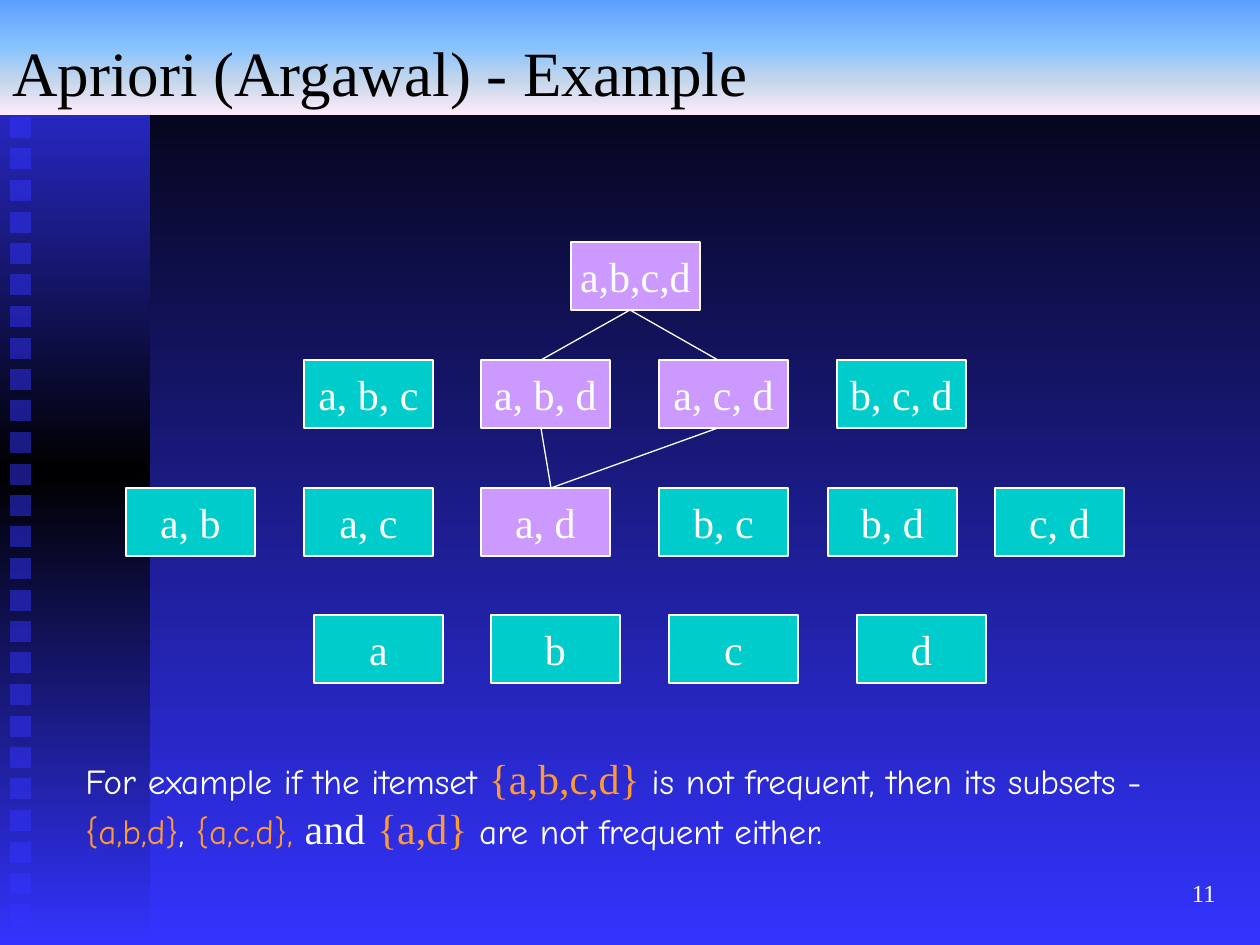
from pptx import Presentation
from pptx.dml.color import RGBColor
from pptx.enum.shapes import MSO_CONNECTOR as Connector, MSO_SHAPE as Preset
from pptx.enum.text import MSO_ANCHOR as Anchor, PP_ALIGN as Align
from pptx.oxml.ns import qn
from pptx.util import Pt
from lxml.etree import SubElement

EMU_PER_PX = 914400 / 126
SERIF, CASUAL = "Times New Roman", "Comic Neue"
COLORS = {
    "black": "000000", "white": "FFFFFF", "blue": "3333FF",
    "frequent": "00CCCC", "infrequent": "CC99FF",
    "orange": "FF9933",
}
BACKDROP = [(0, COLORS["black"]), (100, COLORS["blue"])]
SIDEBAR = [(0, COLORS["blue"]), (50, COLORS["black"]), (100, COLORS["blue"])]
TITLE_BAR = [(0, "5E9EFF"), (40, "85C2FF"), (70, "C4D6EB"), (100, "FFEBFA")]

BOX_WIDTH, BOX_HEIGHT = 129, 68
# Each lattice level: top, then left edge and label of every itemset
LATTICE = [
    (242, [(571, "a,b,c,d")]),
    (360, [(304, "a, b, c"), (481, "a, b, d"), (659, "a, c, d"), (837, "b, c, d")]),
    (488, [(126, "a, b"), (304, "a, c"), (481, "a, d"),
           (659, "b, c"), (828, "b, d"), (995, "c, d")]),
    (615, [(314, "a"), (491, "b"), (669, "c"), (857, "d")]),
]
INFREQUENT = {"a,b,c,d", "a, b, d", "a, c, d", "a, d"}
LINKS = [
    ((551, 488), (541, 428)), ((551, 488), (718, 428)),
    ((541, 360), (630, 310)), ((718, 360), (630, 310)),
]
EXPLANATION = [
    ("For example if the itemset ", CASUAL, 20, "white"),
    ("{a,b,c,d}", SERIF, 24, "orange"),
    (" is not frequent, then its subsets - ", CASUAL, 20, "white"),
    ("{a,b,d}", CASUAL, 20, "orange"),
    (", ", CASUAL, 20, "white"),
    ("{a,c,d}, ", CASUAL, 20, "orange"),
    ("and", SERIF, 24, "white"),
    (" ", CASUAL, 20, "orange"),
    ("{a,d}", SERIF, 24, "orange"),
    (" are not frequent either.", CASUAL, 20, "white"),
]


def px(*lengths):
    return [round(length * EMU_PER_PX) for length in lengths]


def color(name):
    return RGBColor.from_string(COLORS[name])


def set_gradient(fill, element, stops):
    """Fill from top to bottom; element holds the fill's XML."""
    fill.gradient()
    fill.gradient_angle = 270
    stop_list = next(element.iter(qn("a:gsLst")))
    for old_stop in list(stop_list):
        stop_list.remove(old_stop)
    for percent, value in stops:
        stop = SubElement(stop_list, qn("a:gs"), pos=str(percent * 1000))
        SubElement(stop, qn("a:srgbClr"), val=value)


def add_rectangle(slide, left, top, width, height):
    shape = slide.shapes.add_shape(Preset.RECTANGLE, *px(left, top, width, height))
    shape.shadow.inherit = False
    shape.line.fill.background()
    return shape


def write_text(shape, runs, align=Align.LEFT, anchor=Anchor.MIDDLE, wrap=True):
    frame = shape.text_frame
    frame.word_wrap = wrap
    frame.vertical_anchor = anchor
    paragraph = frame.paragraphs[0]
    paragraph.alignment = align
    for text, font_name, size, color_name in runs:
        run = paragraph.add_run()
        run.text = text
        run.font.name = font_name
        run.font.size = Pt(size)
        run.font.color.rgb = color(color_name)


def add_text(slide, left, top, width, height, runs, **layout):
    box = slide.shapes.add_textbox(*px(left, top, width, height))
    write_text(box, runs, **layout)


def add_sidebar(slide):
    strip = add_rectangle(slide, 0, 0, 150, 945)
    set_gradient(strip.fill, strip.element, SIDEBAR)
    for index in range(26):
        square = add_rectangle(slide, 10, round(117 + 31.5 * index), 21, 21)
        square.fill.solid()
        square.fill.fore_color.rgb = color("blue")
        value = next(square.element.spPr.iter(qn("a:srgbClr")))
        SubElement(value, qn("a:alpha"), val="50000")


def add_itemset(slide, left, top, label):
    box = add_rectangle(slide, left, top, BOX_WIDTH, BOX_HEIGHT)
    box.fill.solid()
    box.fill.fore_color.rgb = color("infrequent" if label in INFREQUENT else "frequent")
    box.line.color.rgb = color("white")
    box.line.width = Pt(0.75)
    write_text(box, [(label, SERIF, 24, "white")], align=Align.CENTER, wrap=False)


def add_link(slide, start, end):
    link = slide.shapes.add_connector(Connector.STRAIGHT, *px(*start, *end))
    link.line.color.rgb = color("white")
    link.line.width = Pt(0.75)
    SubElement(link.element.spPr, qn("a:effectLst"))


def add_title(slide, text):
    bar = add_rectangle(slide, 0, 0, 1260, 115)
    set_gradient(bar.fill, bar.element, TITLE_BAR)
    write_text(bar, [(text, SERIF, 36, "black")], anchor=Anchor.BOTTOM)


def main():
    presentation = Presentation()
    presentation.slide_width, presentation.slide_height = px(1260, 945)
    slide = presentation.slides.add_slide(presentation.slide_layouts[6])

    # Backdrop and page number
    set_gradient(slide.background.fill, slide.element, BACKDROP)
    add_sidebar(slide)
    add_text(slide, 966, 861, 262, 63, [("11", SERIF, 14, "white")], align=Align.RIGHT)

    # Itemset lattice
    for top, itemsets in LATTICE:
        for left, label in itemsets:
            add_itemset(slide, left, top, label)
    for start, end in LINKS:
        add_link(slide, start, end)

    # Explanation and title
    add_text(slide, 73, 746, 1155, 113, EXPLANATION, anchor=Anchor.TOP)
    add_title(slide, "Apriori (Argawal) - Example")

    presentation.save("out.pptx")


if __name__ == "__main__":
    main()
